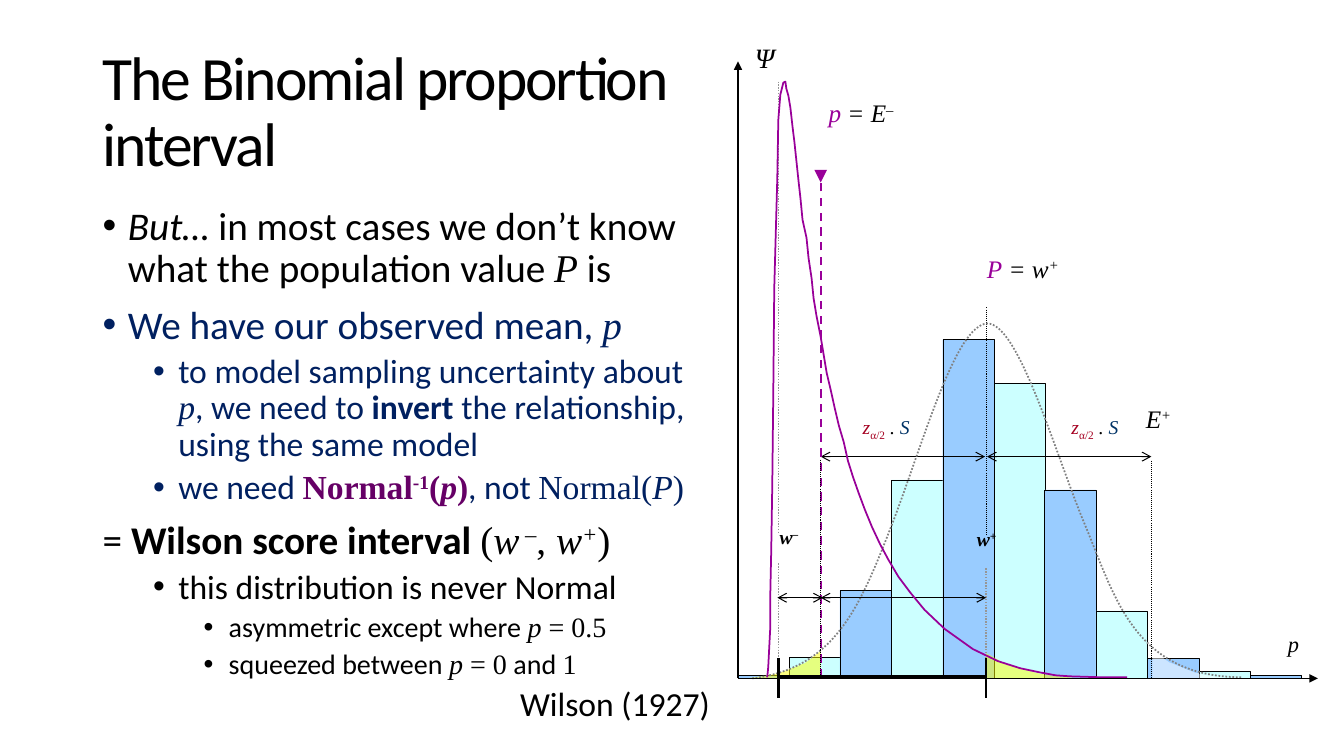
from lxml.etree import SubElement as Sub
from pptx import Presentation
from pptx.dml.color import RGBColor as Rgb
from pptx.enum.dml import MSO_LINE as Dash
from pptx.enum.shapes import MSO_CONNECTOR as Link, MSO_SHAPE as Shape
from pptx.enum.text import MSO_ANCHOR as Anchor, PP_ALIGN as Align
from pptx.oxml.ns import qn
from pptx.util import Pt

PX = 9144
SANS, SERIF = "Calibri", "Times New Roman"
BLACK = Rgb(0, 0, 0)
WHITE = Rgb(255, 255, 255)
NAVY = Rgb(0, 32, 96)
PLUM = Rgb(102, 0, 102)
PURPLE = Rgb(153, 0, 153)
RED = Rgb(165, 0, 33)
TEAL = Rgb(0, 51, 102)
BLUE = Rgb(153, 204, 255)
CYAN = Rgb(204, 255, 255)
YELLOW = Rgb(255, 255, 0)
GREY = Rgb(128, 128, 128)
SILVER = Rgb(150, 150, 150)

BASE, LEFT = 673, 732
FIRST, STEP = 731.8, 50.78
BARS = [3, 21, 87, 197, 336, 293, 187, 67, 20, 7, 3]
LOW, MEAN, HIGH, TOP = 772, 814, 978, 1142

BELL = [(746, 673), (830, 663), (854, 599), (886, 517), (917, 435), (948, 323),
        (979, 321), (1010, 320), (1046, 448), (1075, 518), (1105, 589),
        (1123, 671), (1231, 672)]
TAIL = [(0, 0), (.15, .28), (.15, .34), (.22, .45), (.30, .52), (.38, .62),
        (.55, .79), (.74, .93), (.76, .90), (1, 1), (.5, 1), (0, 1), (0, 1)]
WILSON = [
    (761, 672), (762, 662), (764, 623), (764, 592), (765, 546), (766, 481),
    (767, 392), (768, 286), (771, 176), (772, 119), (774, 94), (777, 82),
    (779, 81), (780, 88), (782, 95), (784, 107), (786, 125), (788, 141),
    (790, 160), (792, 179), (794, 197), (796, 218), (800, 236), (802, 256),
    (805, 276), (807, 296), (810, 314), (814, 334), (817, 352), (820, 370),
    (824, 387), (828, 405), (832, 422), (837, 439), (841, 457), (846, 473),
    (852, 490), (858, 506), (865, 523), (873, 540), (881, 555), (891, 572),
    (903, 588), (917, 605), (937, 624), (965, 644), (990, 656), (1012, 663),
    (1031, 667), (1047, 670), (1061, 671), (1095, 672), (1118, 672)]

ROMAN = dict(font=SERIF)
MATH = dict(font=SERIF, italic=True)
SUPER = dict(MATH, base=30)
STRONG = dict(font=SERIF, bold=True, color=PLUM)


def write(para, words, font=SANS, size=28, color=BLACK, bold=False,
          italic=False, base=0, space=0):
    run = para.add_run()
    run.text = words
    look = run.font
    look.name, look.size = font, Pt(size)
    look.bold, look.italic = bold, italic
    look.color.rgb = color
    if base:
        run._r.get_or_add_rPr().set("baseline", str(base * 1000))
    if space:
        run._r.get_or_add_rPr().set("spc", str(space))


def frame(slide, x, y, w, h, inset=True):
    box = slide.shapes.add_textbox(x * PX, y * PX, w * PX, h * PX).text_frame
    box.word_wrap = True
    if not inset:
        box.margin_left = box.margin_right = box.margin_top = box.margin_bottom = 0
    return box


def label(slide, x, y, w, h, size, parts, inset=False):
    para = frame(slide, x, y, w, h, inset).paragraphs[0]
    para.alignment = Align.CENTER
    for words, style in parts:
        write(para, words, **{"size": size, **MATH, **style})


def item(box, parts, level=0, size=28, color=BLACK, indent=None, mark=True,
         gap=5, align=Align.LEFT):
    first = not box.paragraphs[0].runs
    para = box.paragraphs[0] if first else box.add_paragraph()
    props = para._p.get_or_add_pPr()
    if mark:
        Sub(props, qn("a:buFont")).set("typeface", "Arial")
        Sub(props, qn("a:buChar")).set("char", "•")
    else:
        Sub(props, qn("a:buNone"))
    start = 25 + 50 * level if indent is None else indent
    props.set("marL", str(start * PX))
    props.set("indent", str(-25 * PX if mark else 0))
    para.level, para.alignment = level, align
    para.line_spacing = 0.9
    para.space_before = Pt(0 if first else gap)
    for words, style in parts:
        write(para, words, **{"size": size, "color": color, **style})


def rule(slide, x1, y1, x2, y2, color=BLACK, width=0.75, dash=None,
         head=None, tail=None):
    link = slide.shapes.add_connector(Link.STRAIGHT, x1 * PX, y1 * PX, x2 * PX, y2 * PX)
    link.line.color.rgb = color
    link.line.width = Pt(width)
    if dash:
        link.line.dash_style = dash
    for tag, kind in (("a:headEnd", head), ("a:tailEnd", tail)):
        if kind:
            Sub(link.line._get_or_add_ln(), qn(tag)).set("type", kind)
    Sub(link._element.spPr, qn("a:effectLst"))


def trace(slide, points, smooth=False):
    (x, y), *rest = [(a * PX, b * PX) for a, b in points]
    pen = slide.shapes.build_freeform(x, y, scale=1.0)
    pen.add_line_segments(rest, close=False)
    shape = pen.convert_to_shape()
    shape.shadow.inherit = False
    if smooth:
        route = shape._element.xpath(".//a:path")[0]
        steps = route.findall(qn("a:lnTo"))
        for k in range(0, len(steps), 3):
            arc = Sub(route, qn("a:cubicBezTo"))
            for step in steps[k:k + 3]:
                arc.append(step[0])
                route.remove(step)
    return shape


def curve(slide, points, color, smooth=False, dash=None):
    shape = trace(slide, points, smooth)
    shape.fill.background()
    shape.line.color.rgb = color
    shape.line.width = Pt(1.25)
    if dash:
        shape.line.dash_style = dash


def wedge(slide, x, top, width, color):
    edge = [(x + width * a, top + (BASE - top) * b) for a, b in TAIL]
    shape = trace(slide, edge, smooth=True)
    shape.fill.solid()
    shape.fill.fore_color.rgb = color
    tint = shape._element.xpath(".//a:solidFill/a:srgbClr")[0]
    Sub(tint, qn("a:alpha")).set("val", "50000")
    shape.line.fill.background()


def bar(slide, rank, height):
    x = round(FIRST + STEP * rank)
    shape = slide.shapes.add_shape(
        Shape.RECTANGLE, x * PX, (BASE - height) * PX, 51 * PX, height * PX)
    shape.shadow.inherit = False
    shape.fill.solid()
    shape.fill.fore_color.rgb = CYAN if rank % 2 else BLUE
    shape.line.color.rgb = BLACK
    shape.line.width = Pt(0.25)


def prose(slide):
    title = frame(slide, 92, 40, 634, 145)
    title.vertical_anchor = Anchor.MIDDLE
    title.paragraphs[0].line_spacing = 0.9
    write(title.paragraphs[0], "The Binomial proportion interval", size=44, space=-150)
    box = frame(slide, 92, 200, 622, 548)
    item(box, [("But…", dict(italic=True)),
               (" in most cases we don’t know what the population value ", {}),
               ("P", MATH), (" is", {})])
    item(box, [("We have our observed mean, ", {}), ("p", MATH)], color=NAVY, gap=10)
    item(box, [("to model sampling uncertainty about ", {}), ("p", MATH),
               (", we need to ", {}), ("invert", dict(bold=True)),
               (" the relationship, using the same model", {})], 1, 24, NAVY)
    item(box, [("we need ", {}), ("Normal", STRONG), ("-1", dict(STRONG, base=30)),
               ("(", STRONG), ("p", dict(STRONG, italic=True)), (")", STRONG),
               (", not ", {}), ("Normal(", ROMAN), ("P", MATH), (")", ROMAN)], 1, 24, NAVY)
    item(box, [("= ", {}), ("Wilson score interval ", dict(bold=True)),
               ("(", ROMAN), ("w", MATH), (" –", SUPER), (", ", ROMAN),
               ("w", MATH), ("+", SUPER), (")", ROMAN)], indent=0, mark=False, gap=10)
    item(box, [("this distribution is never Normal", {})], 1, 24)
    item(box, [("asymmetric except where ", {}), ("p", MATH), (" = 0.5", ROMAN)], 2, 20)
    item(box, [("squeezed between ", {}), ("p ", MATH), ("= 0", ROMAN),
               (" and ", {}), ("1", ROMAN)], 2, 20)
    item(box, [("Wilson (1927)", {})], 1, 24, indent=50, mark=False, align=Align.RIGHT)


def graph(slide):
    dots = dict(dash=Dash.ROUND_DOT)
    pale = dict(dots, color=SILVER, width=1)
    both = dict(head="arrow", tail="arrow")
    for rank, height in enumerate(BARS):
        bar(slide, rank, height)
    rule(slide, LOW, 81, LOW, 528, **pale)
    rule(slide, LOW, 559, LOW, 666, **pale)
    rule(slide, MEAN, 172, MEAN, 181, PURPLE, 3, tail="triangle")
    rule(slide, LEFT, BASE, LEFT, 61, width=1, tail="triangle")
    rule(slide, HIGH, 305, HIGH, 531, **dots)
    rule(slide, TOP, 457, TOP, 672, **dots)
    wedge(slide, 1143, 644, 75, WHITE)
    wedge(slide, MEAN, 646, -73, YELLOW)
    rule(slide, MEAN, 453, 977, 453, **both)
    rule(slide, 979, 453, TOP, 453, **both)
    curve(slide, BELL, GREY, True, Dash.ROUND_DOT)
    rule(slide, MEAN, 672, MEAN, 175, PURPLE, 1.5, Dash.DASH)
    rule(slide, HIGH, 564, HIGH, 672, **pale)
    rule(slide, MEAN, 593, HIGH, 593, **both)
    rule(slide, 771, 593, 816, 593, **both)
    rule(slide, LOW, 671, HIGH, 671, width=2)
    wedge(slide, HIGH, 648, 92, YELLOW)
    for x in (LOW, HIGH):
        rule(slide, x, 653, x, 692, width=2)
    curve(slide, WILSON, PURPLE)
    rule(slide, LEFT, BASE, 1307, BASE, width=1, tail="triangle")
    rule(slide, MEAN, 456, MEAN, 671, **dots)


def names(slide):
    hue, sup = dict(color=PURPLE), dict(base=30)
    label(slide, 733, 40, 51, 87, 20, [("Ψ", {})])
    label(slide, 1248, 625, 70, 35, 16, [("p", {})])
    label(slide, 785, 97, 138, 58, 18, [("p", hue), (" = E", {}), ("–", sup)])
    label(slide, 953, 251, 123, 42, 18, [("P", hue), (" = w", {}), ("+", sup)])
    label(slide, 1094, 400, 110, 47, 18, [("E", {}), ("+", sup)])
    for x in (835, 1042):
        label(slide, x, 412, 88, 32, 14,
              [("z", dict(color=RED)), ("α/2", dict(color=RED, italic=False, base=-25)),
               (" . ", {}), ("S", dict(color=TEAL))])
    for x, y, sign in ((743, 516, "–"), (939, 518, "+")):
        label(slide, x, y, 79, 58, 14,
              [("w", dict(bold=True)), (sign, dict(bold=True, base=30))], True)


def main():
    deck = Presentation()
    deck.slide_width, deck.slide_height = 1333 * PX, 750 * PX
    slide = deck.slides.add_slide(deck.slide_layouts[6])
    prose(slide)
    graph(slide)
    names(slide)
    deck.save("out.pptx")


if __name__ == "__main__":
    main()
